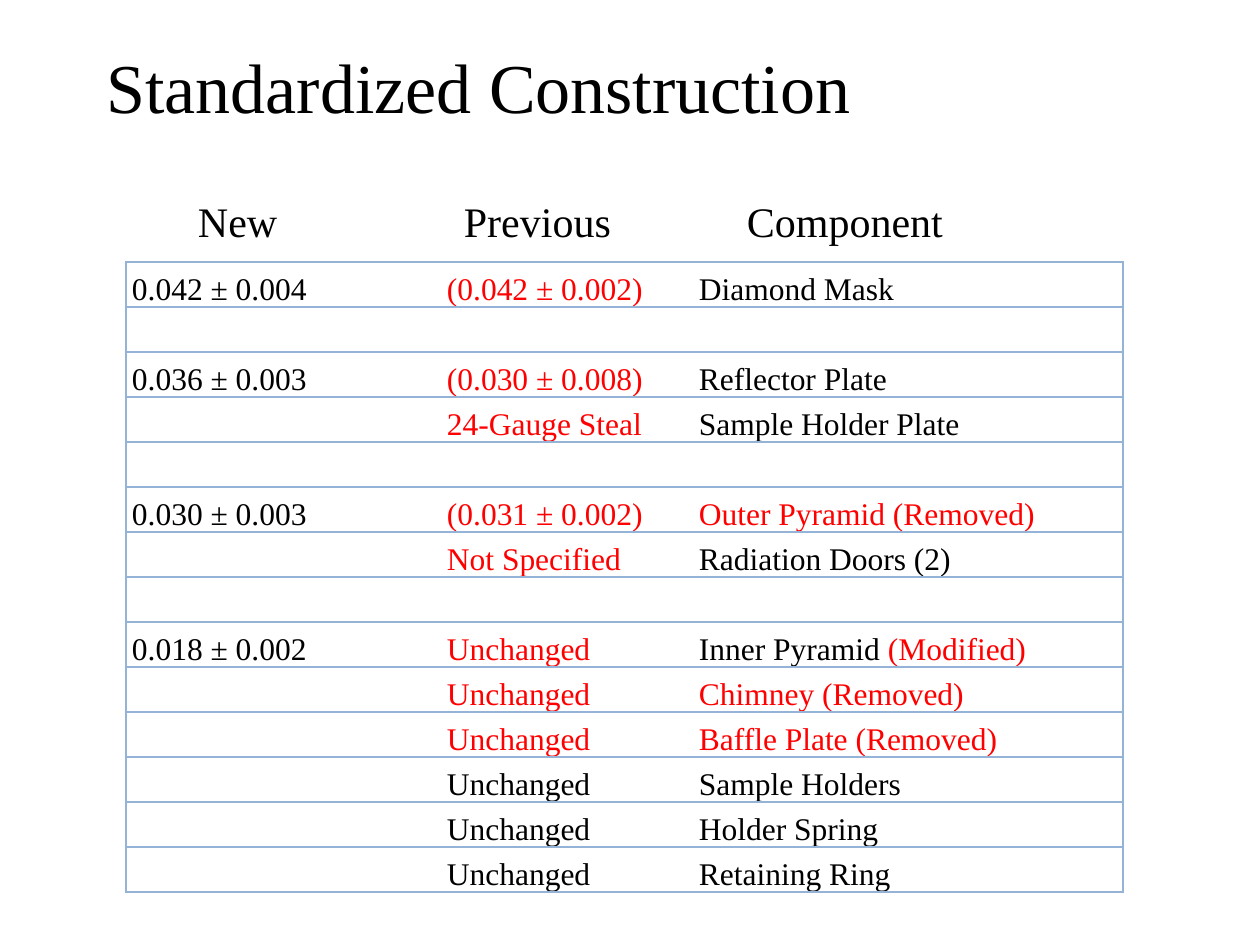
from typing import NamedTuple

from lxml.etree import SubElement
from pptx import Presentation
from pptx.dml.color import RGBColor
from pptx.enum.text import MSO_ANCHOR, MSO_AUTO_SIZE, PP_ALIGN
from pptx.oxml.ns import qn
from pptx.util import Emu, Pt

COLORS = {"black": "000000", "red": "FF0000", "border": "95B3D7"}
FONT = "Times New Roman"
ROW_HEIGHT = 45
COLUMN_WIDTHS = (315, 252, 430)
HEADER_TABS = (266, 549)


class Piece(NamedTuple):
    text: str
    color: str = "black"


class ComponentRow(NamedTuple):
    new: str = ""
    previous: Piece = Piece("")
    component: tuple[Piece, ...] = ()


def red(text: str) -> Piece:
    return Piece(text, "red")


ROWS = (
    ComponentRow("0.042 ± 0.004", red("(0.042 ± 0.002)"), (Piece("Diamond Mask"),)),
    ComponentRow(),
    ComponentRow("0.036 ± 0.003", red("(0.030 ± 0.008)"), (Piece("Reflector Plate"),)),
    ComponentRow("", red("24-Gauge Steal"), (Piece("Sample Holder Plate"),)),
    ComponentRow(),
    ComponentRow("0.030 ± 0.003", red("(0.031 ± 0.002)"), (red("Outer Pyramid (Removed)"),)),
    ComponentRow("", red("Not Specified"), (Piece("Radiation Doors (2)"),)),
    ComponentRow(),
    ComponentRow("0.018 ± 0.002", red("Unchanged"), (Piece("Inner Pyramid "), red("(Modified)"))),
    ComponentRow("", red("Unchanged"), (red("Chimney (Removed)"),)),
    ComponentRow("", red("Unchanged"), (red("Baffle Plate (Removed)"),)),
    ComponentRow("", Piece("Unchanged"), (Piece("Sample Holders"),)),
    ComponentRow("", Piece("Unchanged"), (Piece("Holder Spring"),)),
    ComponentRow("", Piece("Unchanged"), (Piece("Retaining Ring"),)),
)


def px(length: int) -> Emu:
    return Emu(round(length * 914400 / 126))


def format_run(run, size: int, color: str = "black") -> None:
    run.font.name = FONT
    run.font.size = Pt(size)
    run.font.color.rgb = RGBColor.from_string(COLORS[color])


def set_borders(cell, visible: str) -> None:
    properties = cell._tc.get_or_add_tcPr()
    for side in "LRTB":
        line = SubElement(properties, qn(f"a:ln{side}"), w=str(Pt(1)))
        if side in visible:
            fill = SubElement(line, qn("a:solidFill"))
            SubElement(fill, qn("a:srgbClr"), val=COLORS["border"])
        else:
            SubElement(line, qn("a:noFill"))


def fill_cell(cell, pieces: tuple[Piece, ...], borders: str) -> None:
    set_borders(cell, borders)
    cell.fill.background()
    cell.vertical_anchor = MSO_ANCHOR.BOTTOM
    cell.margin_left = cell.margin_right = px(6)
    cell.margin_top, cell.margin_bottom = px(1), 0
    paragraph = cell.text_frame.paragraphs[0]
    paragraph.line_spacing = Pt(17.4)
    for piece in pieces:
        if piece.text:
            run = paragraph.add_run()
            run.text = piece.text
            format_run(run, 18, piece.color)


def add_title(slide) -> None:
    title = slide.shapes.title
    title.left, title.top, title.width, title.height = px(94), px(32), px(1071), px(108)
    title.text_frame.text = "Standardized Construction"
    title.text_frame.vertical_anchor = MSO_ANCHOR.MIDDLE
    paragraph = title.text_frame.paragraphs[0]
    paragraph.alignment = PP_ALIGN.LEFT
    format_run(paragraph.runs[0], 40)


def add_column_headers(slide) -> None:
    box = slide.shapes.add_textbox(px(158), px(189), px(935), px(63))
    frame = box.text_frame
    frame.word_wrap = True
    frame.auto_size = MSO_AUTO_SIZE.SHAPE_TO_FIT_TEXT
    frame.margin_left = px(40)
    frame.text = "New\tPrevious\tComponent"
    paragraph = frame.paragraphs[0]
    tabs = SubElement(paragraph._p.get_or_add_pPr(), qn("a:tabLst"))
    for position in HEADER_TABS:
        SubElement(tabs, qn("a:tab"), pos=str(px(position)), algn="l")
    for run in paragraph.runs:
        format_run(run, 24)


def add_component_table(slide) -> None:
    table = slide.shapes.add_table(
        len(ROWS), len(COLUMN_WIDTHS), px(126), px(262),
        px(sum(COLUMN_WIDTHS)), px(ROW_HEIGHT * len(ROWS)),
    ).table
    table.first_row = table.horz_banding = False
    for column, width in zip(table.columns, COLUMN_WIDTHS):
        column.width = px(width)
    for row, entry in zip(table.rows, ROWS):
        row.height = px(ROW_HEIGHT)
        contents = ((Piece(entry.new),), (entry.previous,), entry.component)
        # Only the outer sides carry vertical borders
        for cell, pieces, borders in zip(row.cells, contents, ("LTB", "TB", "RTB")):
            fill_cell(cell, pieces, borders)


def main() -> None:
    presentation = Presentation()
    presentation.slide_width, presentation.slide_height = px(1260), px(945)
    slide = presentation.slides.add_slide(presentation.slide_layouts[5])
    add_title(slide)
    add_column_headers(slide)
    add_component_table(slide)
    presentation.save("out.pptx")


if __name__ == "__main__":
    main()
